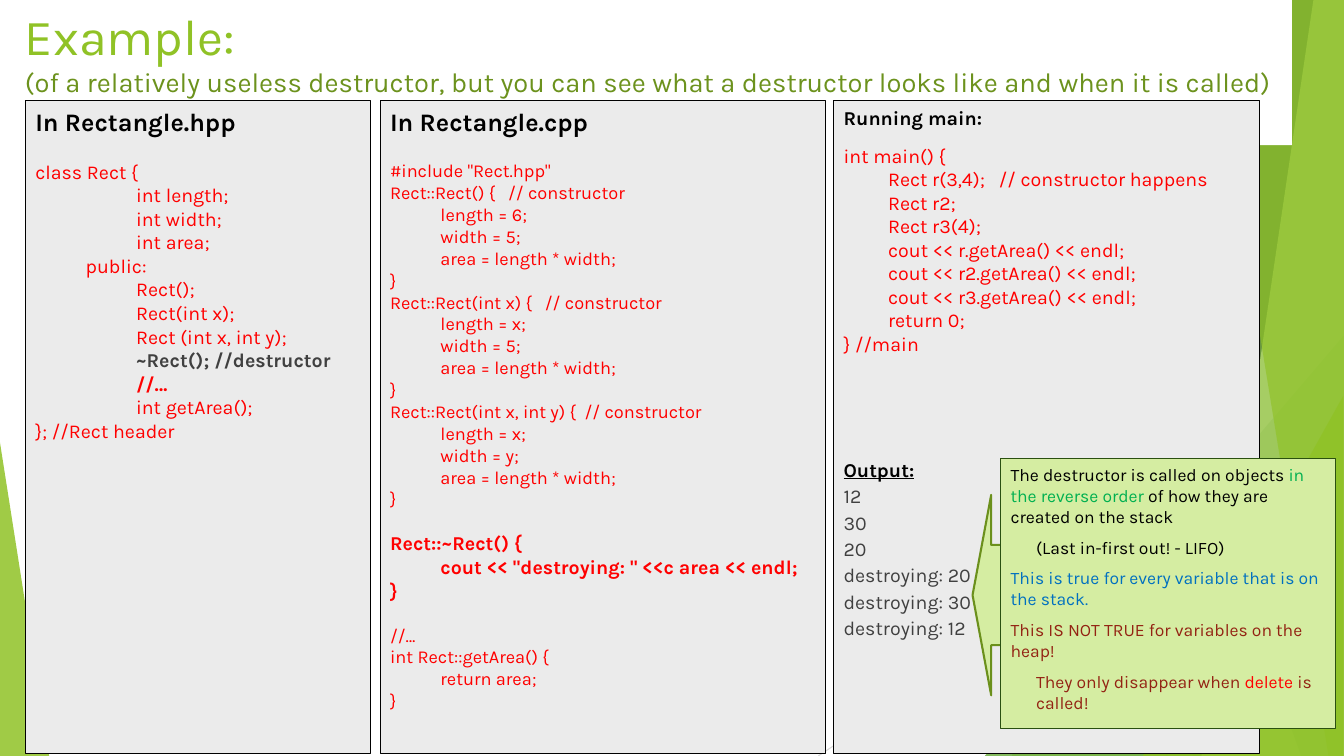
"""Build a slide showing a C++ destructor, its output and the order of calls."""
from lxml.etree import SubElement
from pptx import Presentation
from pptx.dml.color import RGBColor
from pptx.enum.shapes import MSO_CONNECTOR as CONN, MSO_SHAPE as SHAPE
from pptx.enum.text import MSO_ANCHOR as ANCHOR, MSO_AUTO_SIZE as AUTO, PP_ALIGN as ALIGN
from pptx.oxml.ns import qn
from pptx.util import Cm, Pt

FONT = "Karla"
WHITE = RGBColor(0xFF, 0xFF, 0xFF)
BLACK = RGBColor(0, 0, 0)
GREY = RGBColor(0x40, 0x40, 0x40)
PANEL = RGBColor(0xEB, 0xEB, 0xEB)
RED = RGBColor(0xFF, 0, 0)
BLUE = RGBColor(0, 0x70, 0xC0)
BROWN = RGBColor(0x93, 0x23, 0x13)
EMERALD = RGBColor(0, 0xB0, 0x50)
LIME = RGBColor(0x90, 0xC2, 0x26)
OLIVE = RGBColor(0x6C, 0x92, 0x1D)
LEAF = RGBColor(0x54, 0xA0, 0x21)
FOREST = RGBColor(0x3F, 0x78, 0x19)
PALE = RGBColor(0xC0, 0xE4, 0x74)
NOTE = RGBColor(0xD5, 0xED, 0xA2)
NOTE_LINE = RGBColor(0x2A, 0x50, 0x10)
ARROW_LINE = RGBColor(0x6B, 0x90, 0x1C)
SILVER = RGBColor(0xBF, 0xBF, 0xBF)
MIST = RGBColor(0xD9, 0xD9, 0xD9)

W, H = 33.87, 19.05

RAYS = [((26.04, 0), (29.41, H), SILVER), ((W, 10.24), (20.62, H), MIST)]
FACETS = [
    ("band", (31.19, 25.5), LIME, 30),
    ("band", (26.67, 30.05), LIME, 20),
    ("triangle", (24.82, 8.46, 9.04, 1), LEAF, 72),
    ("band", (25.93, 32.79), FOREST, 70),
    ("band", (33.1, 30.28), PALE, 70),
    ("band", (30.38, 33.48), LIME, 65),
    ("triangle", (28.8, 9.98, 5.05, 1), LIME, 80),
    ("triangle", (0, 11.15, 1.24, 0), LIME, 85),
]

TITLE = [
    ("Example:", (36, LIME)),
    ("(of a relatively useless destructor, but you can see what a destructor"
     " looks like and when it is called)", (19.5, OLIVE)),
]

HEAD = (18, BLACK, True)
CODE = (14, RED)
SMALL = (13, RED)
STRONG = (14, RED, True)

HPP = [
    (HEAD, 0, 0, [(0, "In Rectangle.hpp")]),
    (CODE, 16.8, 0, [
        (0, "class Rect {"), (2, "int length;"), (2, "int width;"),
        (2, "int area;"), (1, "public:"), (2, "Rect();"),
        (2, "Rect(int x);"), (2, "Rect (int x, int y);")]),
    ((14, GREY, True), 0, 0, [(2, "~Rect(); //destructor")]),
    (STRONG, 0, 0, [(2, "//…")]),
    (CODE, 0, 0, [(2, "int getArea();"), (0, "}; //Rect header")]),
]
CPP = [
    (HEAD, 0, 0, [(0, "In Rectangle.cpp")]),
    (SMALL, 16.8, 0, [
        (0, '#include "Rect.hpp"'),
        (0, "Rect::Rect() {   // constructor"),
        (1, "length = 6;"), (1, "width = 5;"),
        (1, "area = length * width;"), (0, "}"),
        (0, "Rect::Rect(int x) {   // constructor"),
        (1, "length = x;"), (1, "width = 5;"),
        (1, "area = length * width;"), (0, "}"),
        (0, "Rect::Rect(int x, int y) {  // constructor"),
        (1, "length = x;"), (1, "width = y;"),
        (1, "area = length * width;"), (0, "}")]),
    (STRONG, 15.6, 0, [
        (0, "Rect::~Rect() {"),
        (1, 'cout << "destroying: " <<c area << endl;'), (0, "}")]),
    (SMALL, 15.6, 0, [
        (0, "//…"), (0, "int Rect::getArea() {"), (1, "return area;"), (0, "}")]),
]
MAIN = [
    ((14, BLACK, True), 0, 0, [(0, "Running main:")]),
    (CODE, 10, 0, [
        (0, "int main() {"), (1, "Rect r(3,4);   // constructor happens"),
        (1, "Rect r2;"), (1, "Rect r3(4);"),
        (1, "cout << r.getArea() << endl;"),
        (1, "cout << r2.getArea() << endl;"),
        (1, "cout << r3.getArea() << endl;"),
        (1, "return 0;"), (0, "} //main")]),
    ((14, BLACK, True, True), 73.2, 0, [(0, "Output:")]),
    ((14, GREY), 2, 2, [
        (0, "12"), (0, "30"), (0, "20"), (0, "destroying: 20"),
        (0, "destroying: 30"), (0, "destroying: 12")]),
]
PANELS = [(0.64, 8.69, 1.27, HPP), (9.58, 11.23, 1.27, CPP), (21.01, 10.74, 1.12, MAIN)]

REMARKS = [
    (0, [("The destructor is called on objects ", BLACK),
         ("in the reverse order ", EMERALD),
         ("of how they are created on the stack", BLACK)]),
    (0.64, [("(Last in-first out! - LIFO)", BLACK)]),
    (0, [("This is true for every variable that is on the stack.", BLUE)]),
    (0, [("This IS NOT TRUE for variables on the heap!", BROWN)]),
    (0.64, [("They only disappear when ", BROWN), ("delete", RED), (" is called!", BROWN)]),
]


def paint(sp, fill, line=None, width=0.75, alpha=100):
    """Set the fill, its opacity and the outline of a shape."""
    sp.shadow.inherit = False
    sp.fill.solid()
    sp.fill.fore_color.rgb = fill
    if alpha < 100:
        clr = sp.element.spPr.find(qn("a:solidFill"))[0]
        SubElement(clr, qn("a:alpha")).set("val", str(alpha * 1000))
    if line is None:
        sp.line.fill.background()
    else:
        sp.line.color.rgb = line
        sp.line.width = Pt(width)


def add_shape(s, kind, box, *look, **more):
    """Add a painted preset shape placed in centimetres."""
    sp = s.shapes.add_shape(kind, *map(Cm, box))
    paint(sp, *look, **more)
    return sp


def setup_frame(sp):
    """Make the text of a shape wrap and start at its top."""
    tf = sp.text_frame
    tf.word_wrap = True
    tf.auto_size = AUTO.NONE
    tf.vertical_anchor = ANCHOR.TOP
    tf.margin_left = tf.margin_right = Cm(0.25)
    tf.margin_top = tf.margin_bottom = Cm(0.13)
    return tf


def add_par(tf, runs, indent=0, before=0):
    """Add a paragraph of (text, style) runs."""
    p = tf.paragraphs[0]
    if p.runs:
        p = tf.add_paragraph()
    p.alignment = ALIGN.LEFT
    p.line_spacing = 1.0
    p.space_before, p.space_after = Pt(before), Pt(0)
    pPr = p._p.get_or_add_pPr()
    pPr.set("marL", str(Cm(indent)))
    pPr.set("indent", "0")
    for text, (size, color, *flags) in runs:
        r = p.add_run()
        r.text = text
        r.font.name, r.font.size = FONT, Pt(size)
        r.font.color.rgb = color
        r.font.bold = flags[:1] == [True]
        r.font.underline = flags[1:] == [True]


def add_backdrop(s):
    """Draw the thin rays and the translucent green facets."""
    for start, end, color in RAYS:
        ray = s.shapes.add_connector(CONN.STRAIGHT, *map(Cm, start + end))
        ray.line.color.rgb = color
        ray.line.width = Pt(0.75)
        SubElement(ray.element.spPr, qn("a:effectLst"))
    for kind, place, color, alpha in FACETS:
        if kind == "band":
            top, bottom = map(Cm, place)
            fb = s.shapes.build_freeform(top, 0)
            fb.add_line_segments([(Cm(W), 0), (Cm(W), Cm(H)), (bottom, Cm(H))])
            paint(fb.convert_to_shape(), color, alpha=alpha)
        else:
            x, y, w, apex = place
            sp = add_shape(s, SHAPE.ISOSCELES_TRIANGLE, (x, y, w, H - y), color, alpha=alpha)
            sp.adjustments[0] = apex


def main():
    """Build and save the slide."""
    prs = Presentation()
    prs.slide_width, prs.slide_height = Cm(W), Cm(H)
    s = prs.slides.add_slide(prs.slide_layouts[5])
    add_backdrop(s)

    title = s.shapes.title
    s.shapes.element.append(title.element)
    title.left, title.top, title.width, title.height = map(Cm, (0.38, 0, 32.18, 3.66))
    title.fill.solid()
    title.fill.fore_color.rgb = WHITE
    tf = setup_frame(title)
    for run in TITLE:
        add_par(tf, [run])

    for x, w, step, blocks in PANELS:
        tf = setup_frame(add_shape(s, SHAPE.RECTANGLE, (x, 2.54, w, 16.46), PANEL, BLACK))
        for style, first, rest, lines in blocks:
            for i, (level, text) in enumerate(lines):
                add_par(tf, [(text, style)], level * step, rest if i else first)

    add_shape(s, SHAPE.LEFT_ARROW, (24.51, 12.47, 0.94, 5.05), NOTE, ARROW_LINE, 1.5)
    tf = setup_frame(add_shape(s, SHAPE.RECTANGLE, (25.22, 11.56, 8.43, 6.81), NOTE, NOTE_LINE))
    for i, (indent, runs) in enumerate(REMARKS):
        add_par(tf, [(text, (12.5, color)) for text, color in runs], indent, 7 if i else 0)
    prs.save("out.pptx")


if __name__ == "__main__":
    main()
